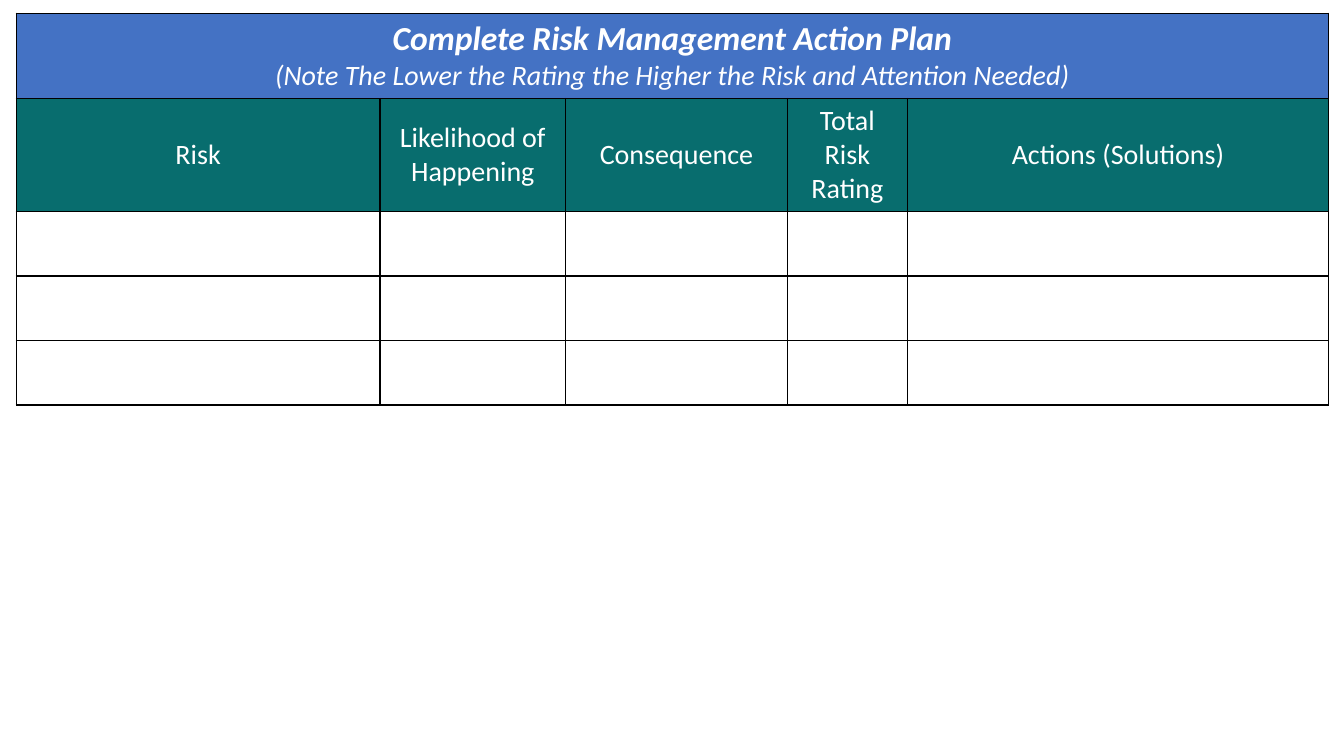
from lxml.etree import SubElement
from pptx import Presentation
from pptx.dml.color import RGBColor
from pptx.enum.text import MSO_ANCHOR, PP_ALIGN
from pptx.oxml.ns import qn
from pptx.util import Inches, Pt

TITLE = [
    ("Complete Risk Management Action Plan", 24, True, True),
    ("(Note The Lower the Rating the Higher the Risk and Attention Needed)", 20, False, True),
]
COLUMNS = [
    ("Risk", 3.61),
    ("Likelihood of Happening", 1.84),
    ("Consequence", 2.2),
    ("Total Risk Rating", 1.19),
    ("Actions (Solutions)", 4.18),
]
EMPTY_ROWS = 3
ROW_H = 0.64
LEFT, TOP = 0.16, 0.13
BLUE, TEAL, WHITE, BLACK = "4472C4", "086D6E", "FFFFFF", "000000"


def rgb(value):
    """Turn a hex string into a colour."""
    return RGBColor.from_string(value)


def style_cell(cell, fill):
    """Outline a cell on all sides and fill it."""
    tcPr = cell._tc.get_or_add_tcPr()
    for side in ("lnL", "lnR", "lnT", "lnB"):
        ln = SubElement(tcPr, qn(f"a:{side}"), w=str(Pt(1)))
        SubElement(SubElement(ln, qn("a:solidFill")), qn("a:srgbClr"), val=BLACK)
    cell.fill.solid()
    cell.fill.fore_color.rgb = rgb(fill)


def write_cell(cell, lines):
    """Write centred white lines into a cell."""
    cell.vertical_anchor = MSO_ANCHOR.MIDDLE
    tf = cell.text_frame
    for i, (text, size, bold, italic) in enumerate(lines):
        p = tf.add_paragraph() if i else tf.paragraphs[0]
        p.alignment = PP_ALIGN.CENTER
        r = p.add_run()
        r.text = text
        r.font.name, r.font.size = "Calibri", Pt(size)
        r.font.bold, r.font.italic = bold, italic
        r.font.color.rgb = rgb(WHITE)


def main():
    """Build the risk plan slide."""
    prs = Presentation()
    prs.slide_width, prs.slide_height = Inches(13.33), Inches(7.5)
    s = prs.slides.add_slide(prs.slide_layouts[6])
    fills = [BLUE, TEAL] + [WHITE] * EMPTY_ROWS
    width = sum(w for _, w in COLUMNS)
    table = s.shapes.add_table(
        len(fills), len(COLUMNS), Inches(LEFT), Inches(TOP),
        Inches(width), Inches(ROW_H * len(fills)),
    ).table
    table.first_row = table.horz_banding = False

    for row, fill in zip(table.rows, fills):
        row.height = Inches(ROW_H)
        for cell in row.cells:
            style_cell(cell, fill)

    table.cell(0, 0).merge(table.cell(0, len(COLUMNS) - 1))
    write_cell(table.cell(0, 0), TITLE)
    for c, (heading, w) in enumerate(COLUMNS):
        table.columns[c].width = Inches(w)
        write_cell(table.cell(1, c), [(heading, 20, False, False)])
    prs.save("out.pptx")


if __name__ == "__main__":
    main()
